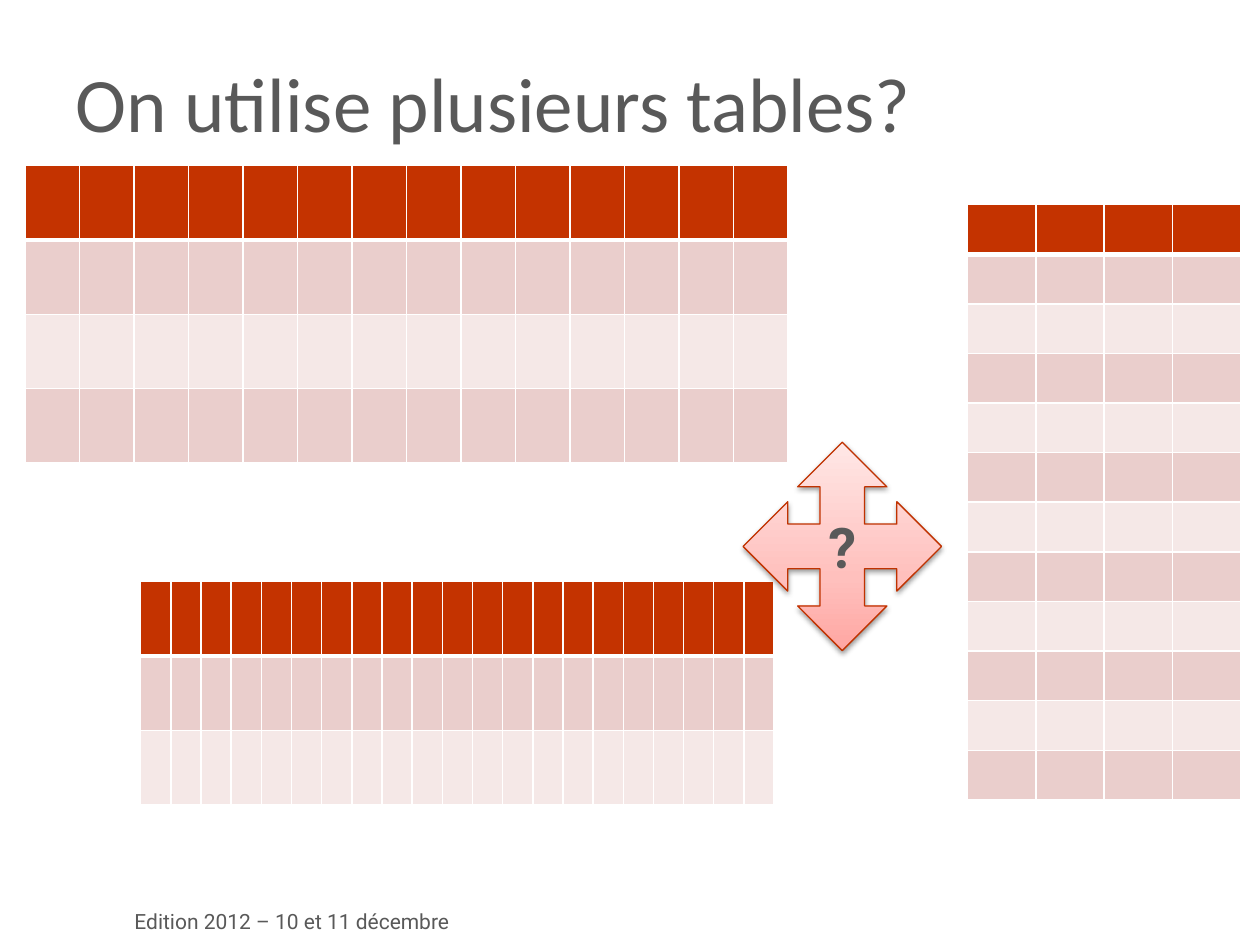
import copy

import lxml.etree
import pptx
import pptx.dml.color
import pptx.enum.shapes
import pptx.enum.text
import pptx.oxml.ns
import pptx.util

Pt = pptx.util.Pt
qn = pptx.oxml.ns.qn
ALIGN = pptx.enum.text.PP_ALIGN
ANCHOR = pptx.enum.text.MSO_ANCHOR

COLORS = {
    "text": "595959",
    "header": "C43300",
    "odd": "EACECC",
    "even": "F5E8E7",
    "border": "FFFFFF",
    "outline": "C03200",
    "shadow": "000000",
}
ARROW_STOPS = [(0, "FFA6A2"), (0.35, "FFC0BD"), (1, "FFE7E6")]


def rgb(value):
    """Return a colour object for a hex string."""
    return pptx.dml.color.RGBColor.from_string(value)


def write_text(frame, text, size, font, bold=False, align=ALIGN.LEFT, anchor=ANCHOR.TOP):
    """Put formatted text in a text frame."""
    frame.vertical_anchor = anchor
    paragraph = frame.paragraphs[0]
    paragraph.alignment = align
    run = paragraph.add_run()
    run.text = text
    run.font.size = Pt(size)
    run.font.name = font
    run.font.bold = bold
    run.font.color.rgb = rgb(COLORS["text"])


def add_color(parent, value):
    """Append an RGB colour element and return it."""
    return lxml.etree.SubElement(parent, qn("a:srgbClr"), val=value)


def set_borders(cell, widths):
    """Draw the cell borders with the given widths by side."""
    properties = cell._tc.get_or_add_tcPr()
    for side, width in widths.items():
        line = lxml.etree.SubElement(properties, qn(f"a:ln{side}"), w=str(Pt(width)))
        add_color(lxml.etree.SubElement(line, qn("a:solidFill")), COLORS["border"])


def add_empty_table(slide, left, top, width, row_height, rows, columns):
    """Add an empty banded table with a header row."""
    frame = slide.shapes.add_table(
        rows, columns, Pt(left), Pt(top), Pt(width), Pt(row_height * rows))
    for index, row in enumerate(frame.table.rows):
        row.height = Pt(row_height)
        band = "header" if index == 0 else "odd" if index % 2 else "even"
        widths = {"L": 1, "R": 1, "T": 3 if index == 1 else 1, "B": 3 if index == 0 else 1}
        for cell in row.cells:
            cell.margin_top = cell.margin_bottom = 0
            set_borders(cell, widths)
            cell.fill.solid()
            cell.fill.fore_color.rgb = rgb(COLORS[band])


def add_question_arrow(slide, left, top, width, height):
    """Add the shaded four-way arrow with its question mark."""
    arrow = slide.shapes.add_shape(
        pptx.enum.shapes.MSO_SHAPE.QUAD_ARROW, Pt(left), Pt(top), Pt(width), Pt(height))
    arrow.line.color.rgb = rgb(COLORS["outline"])
    arrow.line.width = Pt(0.75)

    arrow.fill.gradient()
    arrow.fill.gradient_angle = 90
    stops = arrow._element.spPr.find(f".//{qn('a:gsLst')}")
    stops.append(copy.deepcopy(stops[0]))
    for stop, (position, color) in zip(arrow.fill.gradient_stops, ARROW_STOPS):
        stop.position = position
        stop.color.rgb = rgb(color)

    arrow.shadow.inherit = False
    effects = arrow._element.spPr.find(qn("a:effectLst"))
    shadow = lxml.etree.SubElement(
        effects, qn("a:outerShdw"), blurRad=str(Pt(3.1)), dist=str(Pt(1.6)),
        dir="5400000", rotWithShape="0")
    lxml.etree.SubElement(add_color(shadow, COLORS["shadow"]), qn("a:alpha"), val="38000")

    write_text(arrow.text_frame, "?", size=32, font="Roboto", bold=True,
               align=ALIGN.CENTER, anchor=ANCHOR.MIDDLE)


def add_title(slide, text):
    """Place and fill the title."""
    title = slide.shapes.title
    title.left, title.top, title.width, title.height = Pt(36), Pt(21.6), Pt(648), Pt(72.7)
    write_text(title.text_frame, text, size=44, font="Calibri", anchor=ANCHOR.MIDDLE)


def add_edition(slide, text):
    """Add the edition line at the foot of the slide."""
    edition = slide.shapes.add_textbox(Pt(69.8), Pt(515.5), Pt(199.4), Pt(21.6))
    edition.text_frame.word_wrap = False
    edition.text_frame.auto_size = pptx.enum.text.MSO_AUTO_SIZE.SHAPE_TO_FIT_TEXT
    write_text(edition.text_frame, text, size=12, font="Roboto")


def main():
    """Build the slide and save it."""
    deck = pptx.Presentation()
    deck.slide_width, deck.slide_height = Pt(720), Pt(540)
    slide = deck.slides.add_slide(deck.slide_layouts[5])
    add_edition(slide, "Edition 2012 – 10 et 11 décembre")
    add_title(slide, "On utilise plusieurs tables?")
    add_empty_table(slide, 14.2, 94.6, 436.3, 42.5, rows=4, columns=14)
    add_empty_table(slide, 80.4, 332.4, 361.8, 42.5, rows=3, columns=21)
    add_empty_table(slide, 552.9, 116.9, 156.2, 28.35, rows=12, columns=4)
    add_question_arrow(slide, 424.6, 252.7, 113.4, 119.1)
    deck.save("out.pptx")


if __name__ == "__main__":
    main()
